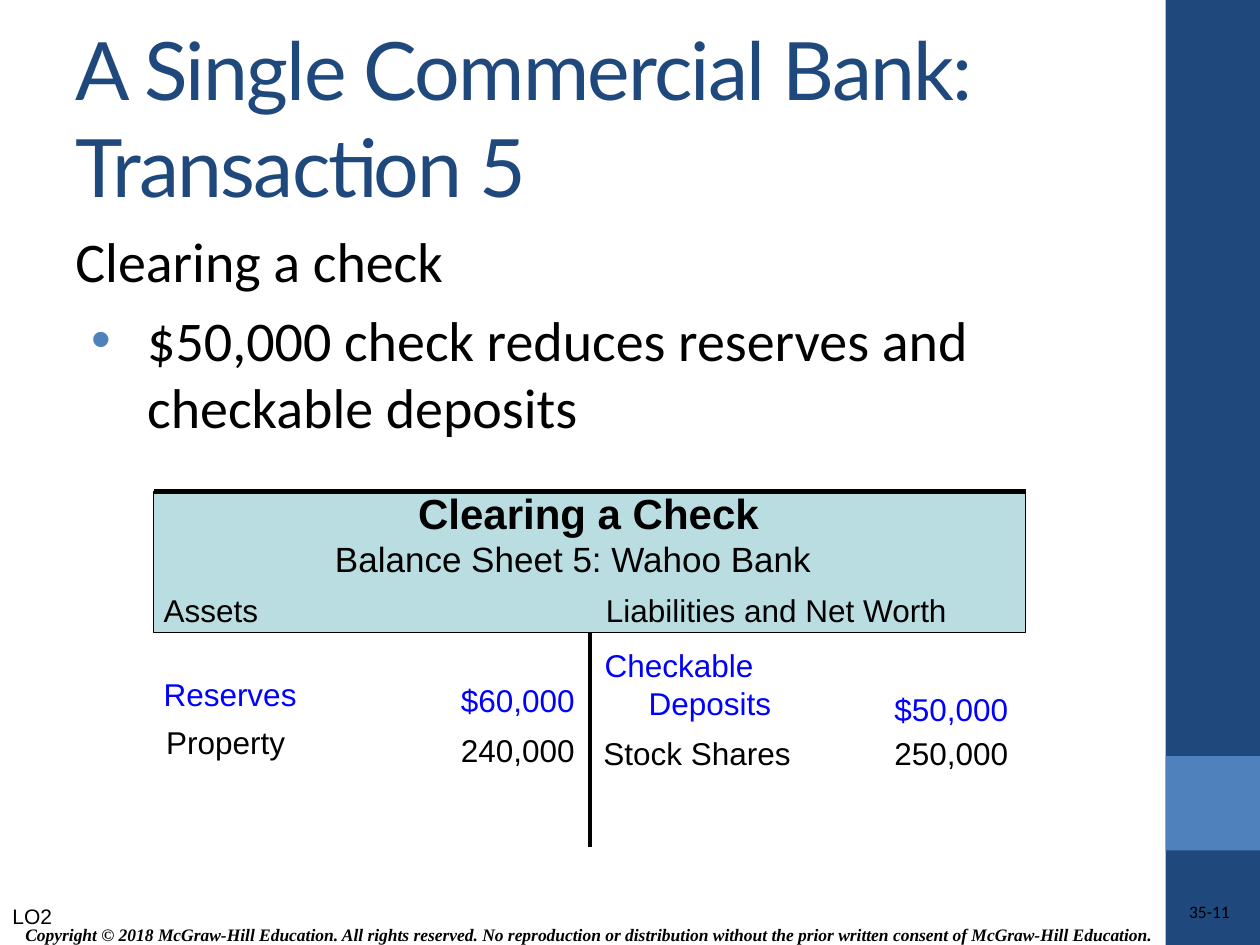
from collections import namedtuple

from lxml.etree import SubElement
from pptx import Presentation
from pptx.dml.color import RGBColor
from pptx.enum.shapes import MSO_CONNECTOR, MSO_SHAPE
from pptx.enum.text import MSO_ANCHOR, MSO_AUTO_SIZE, PP_ALIGN
from pptx.oxml.ns import qn
from pptx.util import Inches, Pt

NAVY = RGBColor(0x1F, 0x49, 0x7D)
BLUE = RGBColor(0x4F, 0x81, 0xBD)
CHANGED = RGBColor(0x00, 0x00, 0xFF)
PALE_TEAL = RGBColor(0xBA, 0xDD, 0xE1)
BLACK = RGBColor(0x00, 0x00, 0x00)

WIDTH, HEIGHT = Inches(10), Inches(7.5)
COLUMNS, ROWS = 100, 75
LEFT, RIGHT, CENTER = PP_ALIGN.LEFT, PP_ALIGN.RIGHT, PP_ALIGN.CENTER

Box = namedtuple("Box", "left top width height")


def inside(box, left, top, width, height):
    return Box(box.left + left, box.top + top, width, height)


def across(columns):
    return round(WIDTH * columns / COLUMNS)


def down(rows):
    return round(HEIGHT * rows / ROWS)


def place(box):
    return across(box.left), down(box.top), across(box.width), down(box.height)


def format_text(paragraph, size, font="Arial", color=BLACK, bold=False, italic=False):
    for run in paragraph.runs:
        run.font.size = Pt(size)
        run.font.name = font
        run.font.color.rgb = color
        run.font.bold = bold
        run.font.italic = italic


def add_text(slide, box, text, size, align=LEFT, wrap=False, **style):
    shape = slide.shapes.add_textbox(*place(box))
    frame = shape.text_frame
    frame.word_wrap = wrap
    if not wrap:
        frame.auto_size = MSO_AUTO_SIZE.SHAPE_TO_FIT_TEXT
    frame.text = text
    for paragraph in frame.paragraphs:
        paragraph.alignment = align
        format_text(paragraph, size, **style)
    return frame


def add_rectangle(slide, box, fill, line_width=None):
    shape = slide.shapes.add_shape(MSO_SHAPE.RECTANGLE, *place(box))
    shape.shadow.inherit = False
    shape.fill.solid()
    shape.fill.fore_color.rgb = fill
    if line_width:
        shape.line.color.rgb = BLACK
        shape.line.width = Pt(line_width)
    else:
        shape.line.fill.background()
    return shape


def add_line(slide, start, end, width):
    line = slide.shapes.add_connector(
        MSO_CONNECTOR.STRAIGHT,
        across(start[0]), down(start[1]), across(end[0]), down(end[1]))
    line.line.color.rgb = BLACK
    line.line.width = Pt(width)
    SubElement(line._element.spPr, qn("a:effectLst"))
    return line


def add_sidebar(slide, box):
    add_rectangle(slide, box, NAVY)
    add_rectangle(slide, inside(box, 0, 60, box.width, 7.5), BLUE)


def add_footer(slide, box):
    frame = add_text(
        slide, inside(box, 0.6, 1.6, 92.2, 2.8),
        "Copyright © 2018 McGraw-Hill Education. All rights reserved. "
        "No reproduction or distribution without the prior written consent "
        "of McGraw-Hill Education.",
        10, CENTER, True, font="Times New Roman", bold=True, italic=True)
    frame.vertical_anchor = MSO_ANCHOR.MIDDLE
    number = add_text(slide, inside(box, 78.1, 0.3, 19.5, 2), "35-11", 10, RIGHT, True,
                      font="Calibri")
    number.margin_left = number.margin_right = 0
    number.margin_top = number.margin_bottom = 0
    add_text(slide, inside(box, 0, 0, 10.2, 3), "LO2", 12, wrap=True)


def set_title(slide, box, text):
    title = slide.shapes.title
    title.left, title.top, title.width, title.height = place(box)
    frame = title.text_frame
    frame.text = text
    frame.word_wrap = True
    frame.auto_size = MSO_AUTO_SIZE.NONE
    frame.vertical_anchor = MSO_ANCHOR.MIDDLE
    paragraph = frame.paragraphs[0]
    paragraph.alignment = LEFT
    format_text(paragraph, 46, "Lato", NAVY)
    paragraph.runs[0].font._element.set("spc", "-100")


def add_body(slide, box):
    frame = add_text(
        slide, box,
        "Clearing a check\n$50,000 check reduces reserves and checkable deposits",
        32, wrap=True, font="Calibri")
    bullet = frame.paragraphs[1]
    bullet.level = 1
    bullet.space_before = Pt(6.4)
    properties = bullet._p.get_or_add_pPr()
    properties.set("marL", str(Inches(0.57)))
    properties.set("indent", str(-Inches(0.44)))
    color = SubElement(properties, qn("a:buClr"))
    SubElement(color, qn("a:srgbClr"), val=str(BLUE))
    SubElement(properties, qn("a:buFont"), typeface="Arial")
    SubElement(properties, qn("a:buChar"), char="•")


def add_balance_sheet(slide, box):
    half = box.width / 2
    header_height = 11.2
    header = add_rectangle(
        slide, inside(box, 0, 0, box.width, header_height), PALE_TEAL, 0.75)
    add_line(slide, (box.left, box.top), (box.left + box.width, box.top), 3)
    divider = add_line(
        slide, (box.left + half, box.top + header_height),
        (box.left + half, box.top + box.height), 2.25)
    divider.begin_connect(header, 2)

    add_text(slide, inside(box, 20, -0.8, 29.1, 5), "Clearing a Check", 24, bold=True)
    add_text(slide, inside(box, 13.4, 3.2, 40.2, 4.4), "Balance Sheet 5: Wahoo Bank", 20)

    amount_width = 11.4
    asset_amount = half - 0.2 - amount_width
    liability_amount = box.width - amount_width
    entries = [
        ("Assets", -0.2, 7.4, 9.5, LEFT, BLACK),
        ("Liabilities and Net Worth", half + 0.3, 7.4, 29.1, LEFT, BLACK),
        ("Reserves", -0.2, 14.1, 12.6, LEFT, CHANGED),
        ("$60,000", asset_amount, 14.6, amount_width, RIGHT, CHANGED),
        ("Property", 0, 17.9, 11.5, LEFT, BLACK),
        ("240,000", asset_amount, 18.5, amount_width, RIGHT, BLACK),
        ("$50,000", liability_amount, 15.3, amount_width, LEFT, CHANGED),
        ("Stock Shares", half + 0.1, 18.8, 16.9, LEFT, BLACK),
        ("250,000", liability_amount, 18.8, amount_width, LEFT, BLACK),
    ]
    for text, left, top, width, align, color in entries:
        add_text(slide, inside(box, left, top, width, 4), text, 18, align, color=color)

    deposits = add_text(slide, inside(box, half + 0.2, 11.8, 15.2, 7),
                        "Checkable\nDeposits", 18, color=CHANGED)
    deposits.paragraphs[1]._p.get_or_add_pPr().set("marL", str(Inches(0.35)))


def main():
    presentation = Presentation()
    presentation.slide_width, presentation.slide_height = WIDTH, HEIGHT
    slide = presentation.slides.add_slide(presentation.slide_layouts[5])
    add_sidebar(slide, Box(92.5, 0, 7.5, ROWS))
    add_footer(slide, Box(0, 71.2, COLUMNS, 3.8))
    set_title(slide, Box(5, 3, 83.3, 12.5), "A Single Commercial Bank: Transaction 5")
    add_body(slide, Box(5, 17.5, 83.3, 52.5))
    add_balance_sheet(slide, Box(12.2, 39, 69.2, 28.2))
    presentation.save("out.pptx")


if __name__ == "__main__":
    main()
